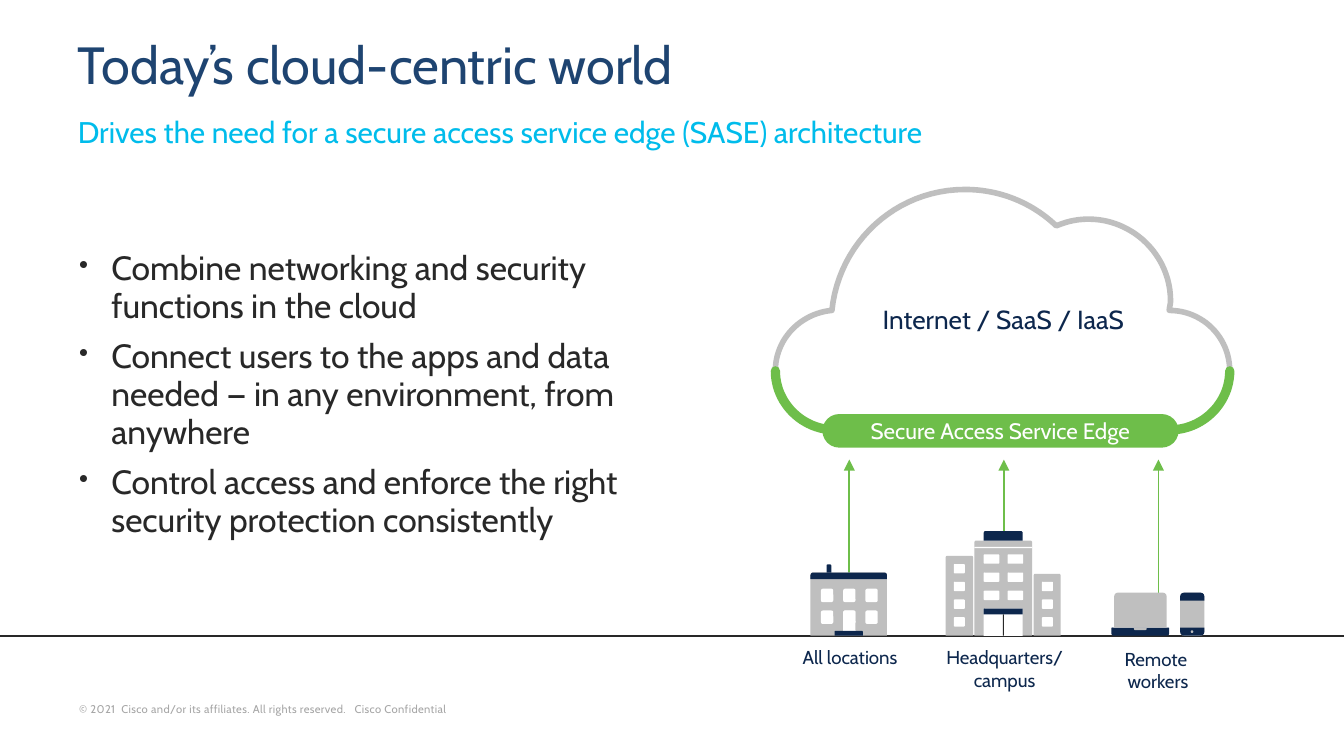
"""Build the cloud-centric world slide and save it."""
from dataclasses import dataclass
from typing import NamedTuple

from lxml.etree import SubElement
from pptx import Presentation
from pptx.dml.color import RGBColor
from pptx.enum.shapes import MSO_CONNECTOR, MSO_SHAPE
from pptx.enum.text import MSO_ANCHOR, PP_ALIGN
from pptx.oxml.ns import qn
from pptx.util import Pt

LEFT, MID = PP_ALIGN.LEFT, PP_ALIGN.CENTER
TOP, CENTER, BOTTOM = MSO_ANCHOR.TOP, MSO_ANCHOR.MIDDLE, MSO_ANCHOR.BOTTOM
PILL, BLOCK = MSO_SHAPE.ROUNDED_RECTANGLE, MSO_SHAPE.ROUND_2_SAME_RECTANGLE
STRAIGHT = MSO_CONNECTOR.STRAIGHT


@dataclass(frozen=True)
class Theme:
    font: str = "Cabin"
    title: str = "1E4471"
    cyan: str = "00BCEB"
    ink: str = "282828"
    navy: str = "0D274D"
    green: str = "6EBE4A"
    gray: str = "BFBFBF"
    pale: str = "A6A6A6"
    white: str = "FFFFFF"
    head: float = 28
    sub: float = 16
    body: float = 18
    cloud: float = 14
    edge: float = 12
    label: float = 10
    foot: float = 6


T = Theme()


class Run(NamedTuple):
    text: str
    gap: float = 0


@dataclass(frozen=True)
class Note:
    box: tuple
    paras: list
    size: float
    color: str
    align: int = MID
    anchor: int = TOP
    inset: tuple = (7.2, 3.6)
    lead: float = 1.0
    after: float = 0
    bullet: bool = False


@dataclass(frozen=True)
class Block:
    x: float
    y: float
    w: float
    h: float
    fill: str
    top: float = 0
    base: float = 0


class Grid(NamedTuple):
    first: Block
    cols: int
    rows: int
    dx: float
    dy: float


class Arrow(NamedTuple):
    x: float
    start: float


GROUND, TIP = 340.6, 246.2
CLOUD_AT = (626.4, 166.3)
CLOUD = [
    ((626.4, 165), (627.1, 162.7), (627.1, 161.3)),
    ((627.1, 136.8), (607, 117.4), (583.2, 117.4)),
    ((576.7, 117.4), (571, 118.8), (565.9, 121)),
    ((553, 108.7), (535.7, 101.5), (517, 101.5)),
    ((479.5, 101.5), (449.3, 130.3), (445.7, 166.3)),
    ((429.1, 167.8), (415.4, 181.4), (415.4, 198.7)),
]
EDGE_AT = (415.4, 198.7)
EDGE = [
    ((415.4, 216), (429.8, 230.4), (447.8, 230.4)),
    ((447.8, 230.4), (626.4, 230.4), (626.4, 230.4)),
    ((644.4, 230.4), (658.8, 216), (658.8, 198.7)),
]
CLOSE = [((658.8, 180.7), (644.4, 166.3), CLOUD_AT)]
ARROWS = [Arrow(455, 307.4), Arrow(537.8, 285.1), Arrow(620.6, 318.2)]

NOTES = [
    Note((37.4, 373.7, 267.8, 12.2), [[Run("© 2021  Cisco and/or its affiliates. All rights reserved.   Cisco Confidential", 0.2)]],
         T.foot, T.pale, LEFT, BOTTOM, (5, 2.2)),
    Note((34.6, 59, 657.4, 29.5), [[Run("Drives the need for a secure access service edge (SASE) architecture")]],
         T.sub, T.cyan, LEFT, lead=0.95),
    Note((34.6, 15.8, 657.4, 42.5), [[Run("Today’s cloud-centric world")]],
         T.head, T.title, LEFT, CENTER, lead=0.8),
    Note((34.6, 130.3, 326.9, 194.4), [
        [Run("Combine networking and security functions in the cloud")],
        [Run("Connect users to the apps and data needed — in any environment, from anywhere")],
        [Run("Control access and enforce the right security protection consistently")],
    ], T.body, T.ink, LEFT, lead=0.95, after=6, bullet=True),
    Note((453.6, 159.1, 167.8, 28.1), [[Run("Interne"), Run("t/", 3), Run("Saa"), Run("S/", 3), Run("IaaS")]],
         T.cloud, T.navy),
    Note((401, 342.7, 108.7, 21.6), [[Run("All locations")]], T.label, T.navy),
    Note((465.8, 342.7, 144.7, 21.6), [[Run("Headquarters/\ncampus")]], T.label, T.navy),
    Note((564.5, 343.4, 111.6, 21.6), [[Run("Remote \nworkers")]], T.label, T.navy),
]
BADGE = Note((440.6, 221.8, 190.8, 18), [[Run("Secure Access Service Edge")]],
             T.edge, T.white, MID, CENTER, (0, 3.6))

PARTS = [
    Block(632.2, 317.5, 13, 23.1, T.gray, 2.2, 2.2),
    Block(632.2, 317.5, 13, 4.3, T.navy, 2.1),
    Block(632.2, 336.2, 13, 4.4, T.navy, 0, 2.2),
    Block(637.9, 337.7, 1.4, 1.4, T.gray, 0.7, 0.7),
    Block(595.4, 336.2, 31, 4.4, T.navy, 0.5, 1.4),
    Block(596.9, 317.5, 28.1, 18.7, T.gray, 2),
    Block(607.5, 336.2, 6.8, 1.4, T.gray, 0, 0.7),
    Block(434.2, 306.7, 41, 33.9, T.gray, 1.4),
    Grid(Block(439.8, 315.4, 6.6, 7.2, T.white, 1, 1), 3, 2, 11.9, 11.7),
    Block(451.7, 327.1, 6.6, 11.3, T.white, 1),
    Block(447.1, 338, 15.1, 2.6, T.navy, 0.4),
    Block(442.8, 302.4, 2.6, 4.4, T.navy, 0.6),
    Block(434.2, 306.7, 41, 3.6, T.navy, 1.4),
    Block(522, 289.6, 31, 51, T.gray, 1),
    Block(527, 326, 20.9, 14.6, T.white, 0.3),
    Block(506.6, 297.8, 14.7, 42.8, T.gray, 0.8),
    Grid(Block(527, 297, 8.4, 5, T.white, 0.5, 0.5), 2, 3, 12.8, 9.75),
    Grid(Block(511, 302.2, 5.9, 5, T.white, 0.5, 0.5), 1, 4, 0, 9.5),
    Block(553.8, 307.4, 14.4, 33.2, T.gray, 0.8),
    Grid(Block(558.2, 311.7, 5.9, 5, T.white, 0.5, 0.5), 1, 3, 0, 9.5),
    Block(527, 326, 20.9, 3.1, T.navy, 0.3),
    Block(522, 293, 31, 0.6, T.white),
    Block(537.2, 329.1, 0.6, 11.5, T.ink),
    Block(527, 284.5, 20.9, 5.1, T.navy, 1),
]


def tint(code: str) -> RGBColor:
    return RGBColor.from_string(code)


def write(frame, note: Note) -> None:
    frame.word_wrap = True
    frame.vertical_anchor = note.anchor
    frame.margin_left = frame.margin_right = Pt(note.inset[0])
    frame.margin_top = frame.margin_bottom = Pt(note.inset[1])
    for i, runs in enumerate(note.paras):
        para = frame.paragraphs[0] if i == 0 else frame.add_paragraph()
        para.alignment, para.line_spacing = note.align, note.lead
        para.space_after = Pt(note.after)
        if note.bullet:
            props = para._p.get_or_add_pPr()
            props.set("marL", str(Pt(18)))
            props.set("indent", str(-Pt(17.3)))
            SubElement(props, qn("a:buSzPct"), val="80000")
            SubElement(props, qn("a:buChar"), char="•")
        for text, gap in runs:
            for j, line in enumerate(text.split("\n")):
                if j:
                    para.add_line_break()
                run = para.add_run()
                run.text = line
                run.font.name, run.font.size = T.font, Pt(note.size)
                run.font.color.rgb = tint(note.color)
                if gap:
                    run._r.get_or_add_rPr().set("spc", str(round(gap * 100)))


def fill(shape, color: str) -> None:
    shape.shadow.inherit = False
    shape.fill.solid()
    shape.fill.fore_color.rgb = tint(color)
    shape.line.fill.background()


def draw_block(shapes, part: Block) -> None:
    shape = shapes.add_shape(BLOCK, Pt(part.x), Pt(part.y), Pt(part.w), Pt(part.h))
    side = min(part.w, part.h)
    shape.adjustments[0] = part.top / side
    shape.adjustments[1] = part.base / side
    fill(shape, part.fill)


def draw_grid(shapes, grid: Grid) -> None:
    one = grid.first
    for row in range(grid.rows):
        for col in range(grid.cols):
            draw_block(shapes, Block(one.x + col * grid.dx, one.y + row * grid.dy,
                                     one.w, one.h, one.fill, one.top, one.base))


def trace(start: tuple, curves: list, steps: int = 24) -> list:
    dots = []
    for a, b, c in curves:
        for i in range(1, steps + 1):
            t = i / steps
            u = 1 - t
            dots.append(tuple(Pt(u**3 * p + 3 * u * u * t * q + 3 * u * t * t * r + t**3 * s)
                              for p, q, r, s in zip(start, a, b, c)))
        start = c
    return dots


def draw_curve(shapes, start: tuple, curves: list, color: str, width: float, close: bool) -> None:
    pen = shapes.build_freeform(Pt(start[0]), Pt(start[1]))
    pen.add_line_segments(trace(start, curves), close=close)
    shape = pen.convert_to_shape()
    shape.shadow.inherit = False
    shape.fill.background()
    shape.line.color.rgb, shape.line.width = tint(color), Pt(width)
    shape.line._get_or_add_ln().set("cap", "rnd")


def draw_line(shapes, start: tuple, end: tuple, color: str, head: bool = False) -> None:
    line = shapes.add_connector(STRAIGHT, *map(Pt, start + end))
    line.line.color.rgb, line.line.width = tint(color), Pt(1)
    if head:
        SubElement(line.line._get_or_add_ln(), qn("a:tailEnd"), type="triangle")
    SubElement(line._element.spPr, qn("a:effectLst"))


def main() -> None:
    deck = Presentation()
    deck.slide_width, deck.slide_height = Pt(720), Pt(405)
    shapes = deck.slides.add_slide(deck.slide_layouts[6]).shapes
    draw_line(shapes, (0, GROUND), (720, GROUND), T.ink)
    for x, start in ARROWS:
        draw_line(shapes, (x, start), (x, TIP), T.green, True)
    ring = CLOUD + EDGE + CLOSE
    draw_curve(shapes, CLOUD_AT, ring, T.gray, 3, True)
    draw_curve(shapes, EDGE_AT, EDGE, T.green, 5, False)
    badge = shapes.add_shape(PILL, *map(Pt, BADGE.box))
    badge.adjustments[0] = 0.5
    fill(badge, T.green)
    write(badge.text_frame, BADGE)
    for part in PARTS:
        (draw_grid if isinstance(part, Grid) else draw_block)(shapes, part)
    for note in NOTES:
        write(shapes.add_textbox(*map(Pt, note.box)).text_frame, note)
    deck.save("out.pptx")


if __name__ == "__main__":
    main()
